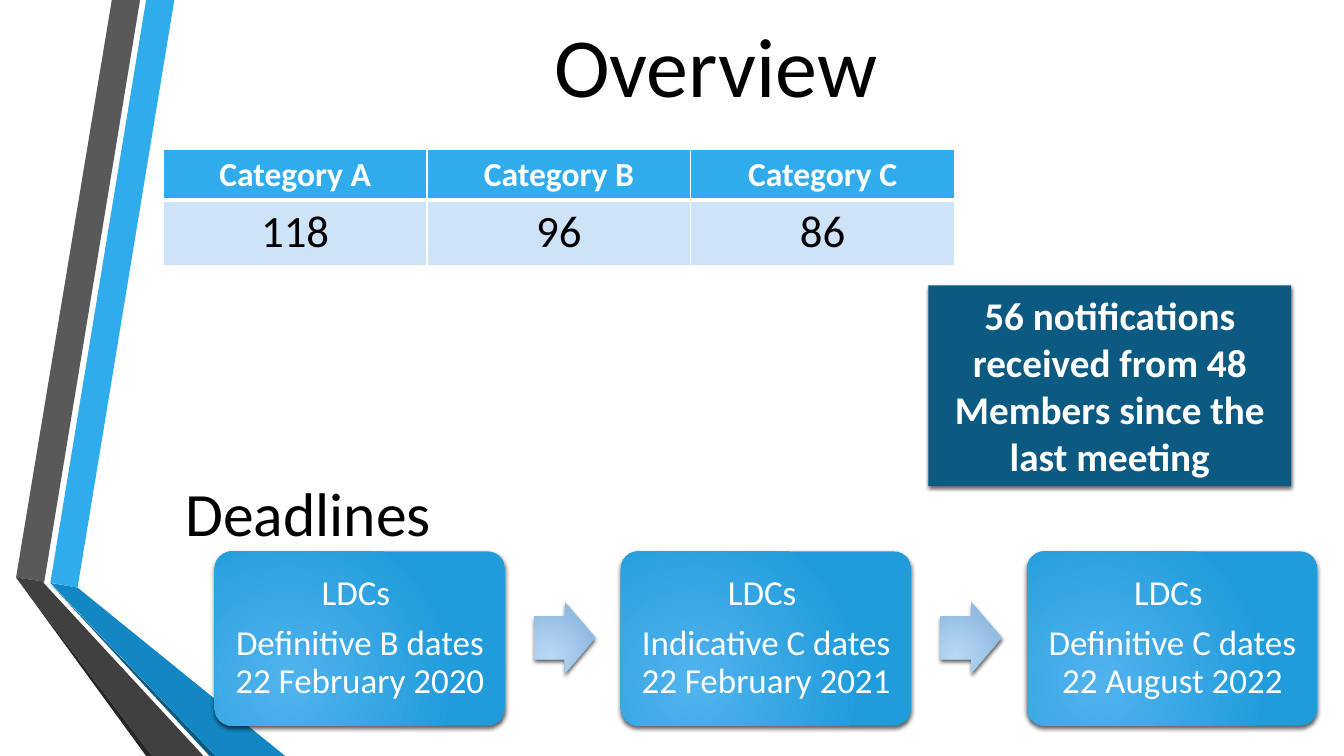
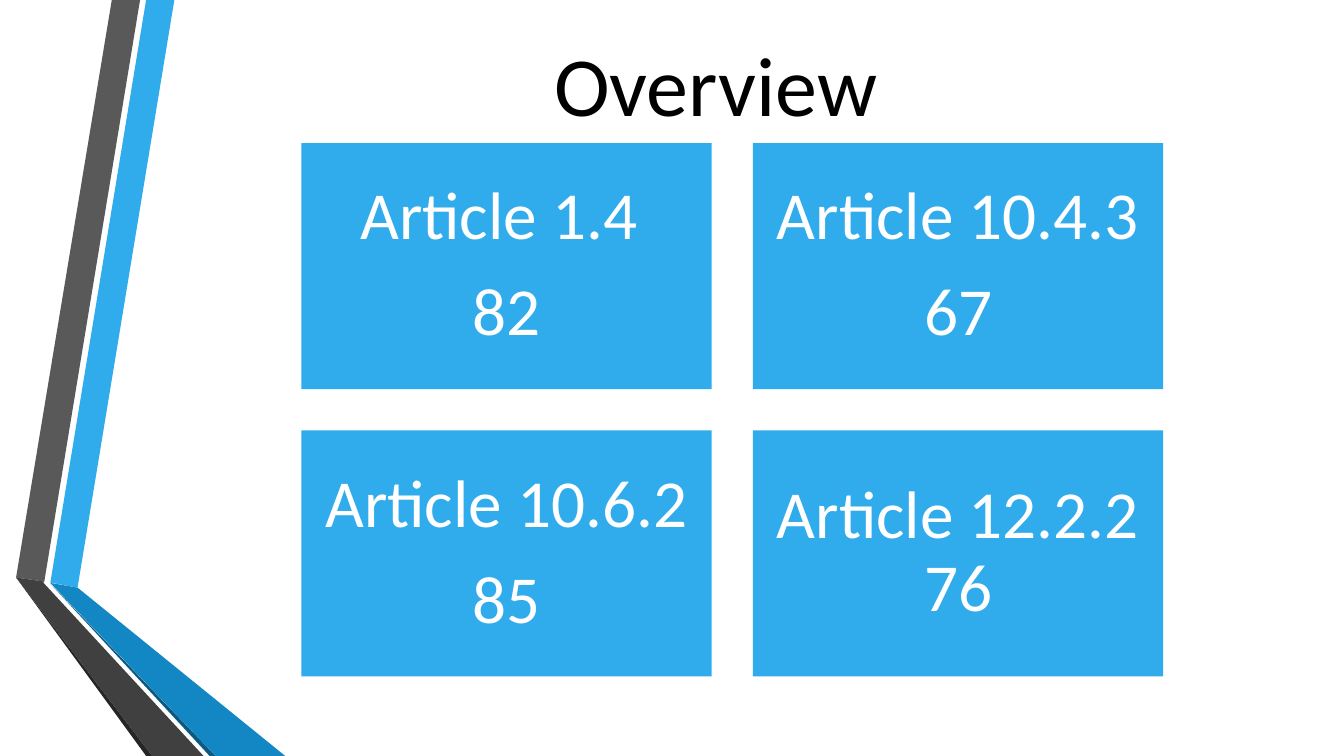
import dataclasses
import itertools
import typing

import lxml.etree
import pptx
import pptx.dml.color
import pptx.enum.shapes
import pptx.enum.text
import pptx.oxml.ns
import pptx.shapes.autoshape
import pptx.slide
import pptx.text.text
import pptx.util

RGB = pptx.dml.color.RGBColor
KIND = pptx.enum.shapes.MSO_SHAPE
ALIGN = pptx.enum.text.PP_ALIGN
MIDDLE = pptx.enum.text.MSO_ANCHOR.MIDDLE
FIXED = pptx.enum.text.MSO_AUTO_SIZE.NONE
Shape = pptx.shapes.autoshape.Shape
Slide = pptx.slide.Slide

WHITE = RGB(0xFF, 0xFF, 0xFF)
BLACK = RGB(0x00, 0x00, 0x00)
SKY = RGB(0x30, 0xAC, 0xEC)
BLUE = RGB(0x12, 0x87, 0xC3)
NAVY = RGB(0x0C, 0x5A, 0x82)
PALE = RGB(0xCD, 0xE3, 0xF8)
GREY = RGB(0x59, 0x59, 0x59)
COAL = RGB(0x40, 0x40, 0x40)
INK = RGB(0x26, 0x26, 0x26)
CARD = (RGB(0x51, 0xB3, 0xED), RGB(0x21, 0x9C, 0xDB))
ARROW = (RGB(0xB9, 0xD9, 0xF5), RGB(0x92, 0xBB, 0xE2))

COLS, ROWS = 160, 90
UNIT = pptx.util.Inches(1) / 12
FONT = "Calibri"
SPACE = 0.35


@dataclasses.dataclass(frozen=True)
class Box:
    left: float
    top: float
    width: float
    height: float

    def move(self, right: float, down: float = 0) -> "Box":
        return dataclasses.replace(self, left=self.left + right, top=self.top + down)

    def spans(self) -> list[int]:
        return [grid(n) for n in (self.left, self.top, self.width, self.height)]


@dataclasses.dataclass(frozen=True)
class Look:
    size: float
    color: RGB = WHITE
    bold: bool = False
    align: ALIGN = ALIGN.CENTER
    inset: float = 1.2
    lead: float = 1.0


@dataclasses.dataclass(frozen=True)
class Band:
    color: RGB
    points: tuple[tuple[float, float], ...]


BANDS = (
    Band(SKY, ((6, 69.36), (9.24, 69.96), (20.76, 0), (17.4, 0))),
    Band(GREY, ((16.68, 0), (13.32, 0), (1.92, 68.76), (5.28, 69.24))),
    Band(INK, ((1.92, 68.76), (17.4, 90), (18.12, 90))),
    Band(NAVY, ((6, 69.48), (24.96, 90), (25.68, 90))),
    Band(BLUE, ((6, 69.4), (25.68, 90), (33.96, 90), (9.24, 69.96))),
    Band(COAL, ((24.24, 90), (5.16, 69.36), (5.28, 69.24), (1.92, 68.76), (18.12, 90))),
)
HEAD = Look(60, BLACK)
SUB = Look(44, BLACK, align=ALIGN.LEFT)
NOTE = Look(28, bold=True)
STEP = Look(25, inset=1.8, lead=0.9)
TILE = Look(48, inset=2.4, lead=0.9)
LABEL = Look(24, bold=True)
COUNT = Look(32, BLACK)

TABLE = (("Category A", "118"), ("Category B", "96"), ("Category C", "86"))
STEPS = (
    "Definitive B dates 22 February 2020",
    "Indicative C dates 22 February 2021",
    "Definitive C dates 22 August 2022",
)
TILES = (
    ("Article 1.4 ", "82"),
    ("Article 10.4.3 ", "67"),
    ("Article 10.6.2 ", "85"),
    ("Article 12.2.2 76",),
)


def grid(count: float) -> int:
    return round(count * UNIT)


def put(item: typing.Any, values: dict[str, typing.Any]) -> None:
    for name, value in values.items():
        setattr(item, name, value)


def node(root: typing.Any, tag: str, **marks: str) -> typing.Any:
    return lxml.etree.SubElement(root, pptx.oxml.ns.qn(tag), marks)


def style(para: typing.Any, look: Look) -> None:
    put(para, {"alignment": look.align, "line_spacing": look.lead})
    put(para.font, {"name": FONT, "size": pptx.util.Pt(look.size), "bold": look.bold})
    para.font.color.rgb = look.color


def write(frame: pptx.text.text.TextFrame, lines: tuple[str, ...], look: Look) -> None:
    inset = grid(look.inset)
    put(frame, {"word_wrap": True, "auto_size": FIXED, "vertical_anchor": MIDDLE,
                "margin_left": inset, "margin_right": inset})
    frame.text = "\n".join(lines)
    for para in frame.paragraphs:
        style(para, look)
    for para in frame.paragraphs[:-1]:
        para.space_after = pptx.util.Pt(look.size * SPACE)


def shade(shape: Shape) -> None:
    effect = shape.element.spPr.find(pptx.oxml.ns.qn("a:effectLst"))
    outer = node(effect, "a:outerShdw", blurRad=str(pptx.util.Pt(3)),
                 dist=str(pptx.util.Pt(2)), dir="5400000", rotWithShape="0")
    node(node(outer, "a:srgbClr", val=str(BLACK)), "a:alpha", val="64000")


def glow(shape: Shape, colors: tuple[RGB, RGB]) -> None:
    shape.fill.gradient()
    for stop, color in zip(shape.fill.gradient_stops, colors):
        stop.color.rgb = color
    fill = shape.element.spPr.find(pptx.oxml.ns.qn("a:gradFill"))
    fill.remove(fill.find(pptx.oxml.ns.qn("a:lin")))
    ring = node(fill, "a:path", path="circle")
    node(ring, "a:fillToRect", l="50000", t="100000", r="100000", b="50000")


def plain(shape: Shape, color: RGB) -> None:
    shape.fill.solid()
    shape.fill.fore_color.rgb = color
    shape.line.fill.background()
    shape.shadow.inherit = False


def block(slide: Slide, kind: KIND, box: Box, color: RGB) -> Shape:
    shape = slide.shapes.add_shape(kind, *box.spans())
    plain(shape, color)
    return shape


def raised(slide: Slide, kind: KIND, box: Box, colors: tuple[RGB, RGB], *bends: float) -> Shape:
    shape = block(slide, kind, box, colors[0])
    glow(shape, colors)
    shade(shape)
    for index, bend in enumerate(bends):
        shape.adjustments[index] = bend
    return shape


def ribbon(slide: Slide) -> None:
    tree = slide.slide_layout.shapes.element
    for band in BANDS:
        first, *rest = [(grid(x), grid(y)) for x, y in band.points]
        pen = slide.shapes.build_freeform(*first)
        pen.add_line_segments(rest)
        shape = pen.convert_to_shape()
        plain(shape, band.color)
        tree.append(shape.element)


def start(deck: typing.Any, top: float) -> Slide:
    slide = deck.slides.add_slide(deck.slide_layouts[5])
    box = Box(19.44, top, 131.52, 9.84)
    title = slide.shapes.title
    put(title, dict(zip(("left", "top", "width", "height"), box.spans())))
    write(title.text_frame, ("Overview",), HEAD)
    return slide


def edge(cell: typing.Any, foot: float) -> None:
    props = cell._tc.get_or_add_tcPr()
    for index, side in enumerate("LRTB"):
        width = foot if side == "B" else 1
        line = node(props, f"a:ln{side}", w=str(pptx.util.Pt(width)))
        node(node(line, "a:solidFill"), "a:srgbClr", val=str(WHITE))
        props.insert(index, line)


def totals(slide: Slide) -> None:
    box = Box(19.44, 17.76, 94.2, 13.56)
    table = slide.shapes.add_table(2, len(TABLE), *box.spans()).table
    for row, height in zip(table.rows, (6, 7.56)):
        row.height = grid(height)
    for col, pair in enumerate(TABLE):
        table.columns[col].width = grid(box.width / len(TABLE))
        for row, (look, color, foot) in enumerate(((LABEL, SKY, 3), (COUNT, PALE, 1))):
            cell = table.cell(row, col)
            cell.text = pair[row]
            style(cell.text_frame.paragraphs[0], look)
            cell.fill.solid()
            cell.fill.fore_color.rgb = color
            edge(cell, foot)


def dates(slide: Slide) -> None:
    label = slide.shapes.add_textbox(*Box(20.9, 56.04, 60, 9.84).spans())
    write(label.text_frame, ("Deadlines",), SUB)
    card = Box(25.56, 65.64, 34.56, 20.76)
    arrow = Box(63.6, 71.64, 7.32, 8.52)
    pitch = 48.36
    for index, text in enumerate(STEPS):
        if index:
            raised(slide, KIND.RIGHT_ARROW, arrow.move(pitch * (index - 1)), ARROW, 0.6, 0.5)
        shape = raised(slide, KIND.ROUNDED_RECTANGLE, card.move(pitch * index), CARD, 0.1)
        write(shape.text_frame, ("LDCs ", text), STEP)


def notice(slide: Slide) -> None:
    shape = block(slide, KIND.RECTANGLE, Box(110.52, 33.96, 43.2, 23.88), NAVY)
    shade(shape)
    write(shape.text_frame,
          ("56 notifications received from 48 Members since the last meeting",), NOTE)


def tiles(slide: Slide) -> None:
    tile, gap = Box(35.88, 17.04, 48.84, 29.28), 4.92
    for (row, col), lines in zip(itertools.product(range(2), repeat=2), TILES):
        box = tile.move(col * (tile.width + gap), row * (tile.height + gap))
        write(block(slide, KIND.RECTANGLE, box, SKY).text_frame, lines, TILE)


def main() -> None:
    deck = pptx.Presentation()
    put(deck, {"slide_width": grid(COLS), "slide_height": grid(ROWS)})
    first = start(deck, 2.64)
    ribbon(first)
    totals(first)
    dates(first)
    notice(first)
    tiles(start(deck, 4.92))
    deck.save("out.pptx")


if __name__ == "__main__":
    main()
